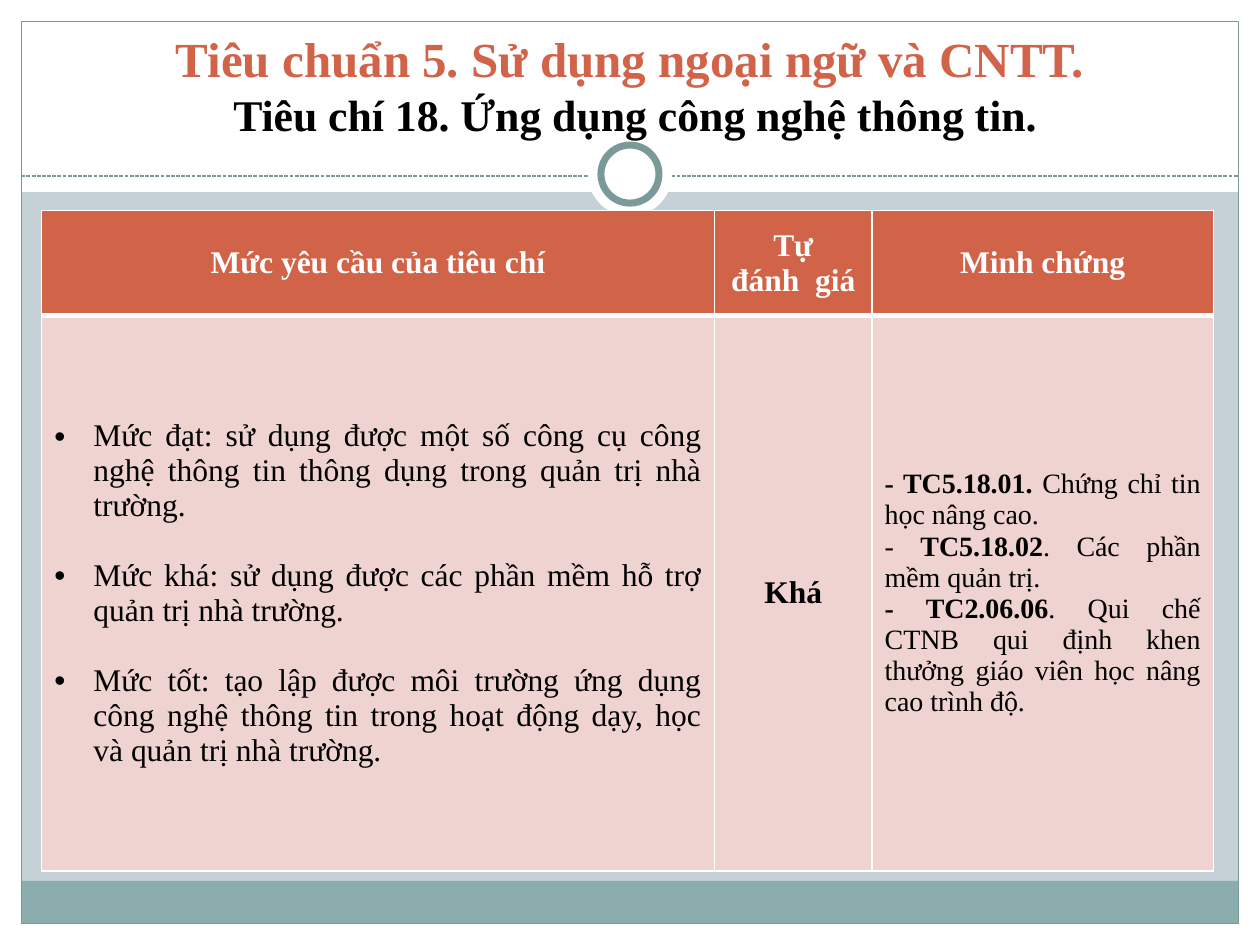
"""Build a slide that rates a school's use of information technology."""
from lxml import etree
from pptx import Presentation
from pptx.dml.color import RGBColor
from pptx.enum.dml import MSO_LINE
from pptx.enum.shapes import MSO_CONNECTOR, MSO_SHAPE
from pptx.enum.text import MSO_ANCHOR, PP_ALIGN
from pptx.oxml.ns import qn
from pptx.util import Cm, Pt

RECTANGLE, ELLIPSE = MSO_SHAPE.RECTANGLE, MSO_SHAPE.OVAL
STRAIGHT = MSO_CONNECTOR.STRAIGHT
DASH = MSO_LINE.SQUARE_DOT
CENTER, JUSTIFY = PP_ALIGN.CENTER, PP_ALIGN.JUSTIFY
MIDDLE, BOTTOM = MSO_ANCHOR.MIDDLE, MSO_ANCHOR.BOTTOM

WIDTH, HEIGHT, MARGIN = 25.4, 19.05, 0.43
WHITE, BLACK, RED, PINK = "FFFFFF", "000000", "D16349", "EED3D0"
GREEN, BAND, BACKGROUND = "7C999A", "8CADAE", "C5D1D7"

HEADINGS = [["Mức yêu cầu của tiêu chí"], ["Tự", "đánh  giá"], ["Minh chứng"]]
LEVELS = [
    "Mức đạt: sử dụng được một số công cụ công nghệ thông tin thông dụng "
    "trong quản trị nhà trường.",
    "Mức khá: sử dụng được các phần mềm hỗ trợ quản trị nhà trường.",
    "Mức tốt: tạo lập được môi trường ứng dụng công nghệ thông tin trong "
    "hoạt động dạy, học và quản trị nhà trường.",
]
EVIDENCE = [
    [("- TC5.18.01. ", True), ("Chứng chỉ tin học nâng cao.", False)],
    [("- ", False), ("TC5.18.02", True), (". Các phần mềm quản trị.", False)],
    [("- TC2.06.06", True),
     (". Qui chế CTNB qui định khen thưởng giáo viên học nâng cao trình độ.", False)],
]


def rgb(value):
    """Turn a hex string into a colour."""
    return RGBColor.from_string(value)


class SlidePainter:
    """Hold the style and the current slide."""

    font = "Times New Roman"

    def __init__(self, slide):
        """Keep the slide and colour its background."""
        self.shapes = slide.shapes
        slide.background.fill.solid()
        slide.background.fill.fore_color.rgb = rgb(BACKGROUND)

    def shape(self, kind, left, top, width, height, fill=None, line=None, weight=0.75):
        """Add a preset shape."""
        shape = self.shapes.add_shape(kind, Cm(left), Cm(top), Cm(width), Cm(height))
        shape.shadow.inherit = False
        if fill:
            shape.fill.solid()
            shape.fill.fore_color.rgb = rgb(fill)
        else:
            shape.fill.background()
        if line:
            shape.line.color.rgb = rgb(line)
            shape.line.width = Pt(weight)
        else:
            shape.line.fill.background()

    def circle(self, middle, diameter, **style):
        """Add a circle centred across the slide."""
        self.shape(ELLIPSE, (WIDTH - diameter) / 2, middle - diameter / 2,
                   diameter, diameter, **style)

    def rule(self, top):
        """Add a dashed line between the side margins."""
        line = self.shapes.add_connector(
            STRAIGHT, Cm(MARGIN), Cm(top), Cm(WIDTH - MARGIN), Cm(top))
        line.line.color.rgb = rgb(GREEN)
        line.line.width = Pt(0.75)
        line.line.dash_style = DASH
        etree.SubElement(line._element.spPr, qn("a:effectLst"))

    def paragraph(self, para, spans, size, color=BLACK, align=CENTER):
        """Fill a paragraph with (text, bold) spans."""
        para.alignment = align
        for text, bold in spans:
            span = para.add_run()
            span.text = text
            span.font.name, span.font.size, span.font.bold = self.font, Pt(size), bold
            span.font.color.rgb = rgb(color)

    def paragraphs(self, frame, lines, size, color=BLACK, align=CENTER):
        """Fill a text frame with one paragraph for each list of spans."""
        frame.text = "\n" * (len(lines) - 1)
        for para, spans in zip(frame.paragraphs, lines):
            self.paragraph(para, spans, size, color, align)

    def title(self, left, top, width, height, lines):
        """Add the title, each line given as text, size and colour."""
        box = self.shapes.add_textbox(Cm(left), Cm(top), Cm(width), Cm(height))
        frame = box.text_frame
        frame.word_wrap = True
        frame.vertical_anchor = BOTTOM
        frame.text = "\n" * (len(lines) - 1)
        for para, (text, size, color) in zip(frame.paragraphs, lines):
            self.paragraph(para, [(text, True)], size, color)

    def table(self, left, top, columns, rows):
        """Add an empty table with the given column widths and row heights."""
        table = self.shapes.add_table(
            len(rows), len(columns), Cm(left), Cm(top),
            Cm(sum(columns)), Cm(sum(rows))).table
        for column, width in zip(table.columns, columns):
            column.width = Cm(width)
        for row, height in zip(table.rows, rows):
            row.height = Cm(height)
        return table

    def cell(self, cell, fill, top=1, bottom=1):
        """Give a cell its fill, anchor and white borders."""
        cell.vertical_anchor = MIDDLE
        properties = cell._tc.get_or_add_tcPr()
        for side, weight in (("L", 1), ("R", 1), ("T", top), ("B", bottom)):
            line = etree.SubElement(properties, qn(f"a:ln{side}"), w=str(Pt(weight)))
            solid = etree.SubElement(line, qn("a:solidFill"))
            etree.SubElement(solid, qn("a:srgbClr"), val=WHITE)
        cell.fill.solid()
        cell.fill.fore_color.rgb = rgb(fill)

    def bullets(self, frame, indent, gap):
        """Put bullets on every paragraph and a gap between them."""
        for index, para in enumerate(frame.paragraphs):
            para.space_before = Pt(gap if index else 0)
            properties = para._p.get_or_add_pPr()
            properties.set("marL", str(Cm(indent)))
            properties.set("indent", str(-Cm(indent)))
            etree.SubElement(properties, qn("a:buFont"), typeface="Arial")
            etree.SubElement(properties, qn("a:buChar"), char="•")


def main():
    """Build and save the slide."""
    deck = Presentation()
    deck.slide_width, deck.slide_height = Cm(WIDTH), Cm(HEIGHT)
    page = SlidePainter(deck.slides.add_slide(deck.slide_layouts[6]))

    inner_width, inner_height = WIDTH - 2 * MARGIN, HEIGHT - 2 * MARGIN
    for area in ((0, HEIGHT - MARGIN, WIDTH, MARGIN), (0, 0, WIDTH, 3.87),
                 (0, 0, MARGIN, HEIGHT), (WIDTH - MARGIN, 0, MARGIN, HEIGHT)):
        page.shape(RECTANGLE, *area, fill=WHITE)
    page.shape(RECTANGLE, MARGIN, 17.76, inner_width, 0.86, fill=BAND)
    page.shape(RECTANGLE, MARGIN, MARGIN, inner_width, inner_height, line=GREEN)
    page.rule(3.55)
    page.circle(3.51, 1.7, fill=WHITE)
    page.circle(3.51, 1.17, fill=WHITE, line=GREEN, weight=4)

    page.title(0.85, 0.2, 23.7, 2.75, [
        ("Tiêu chuẩn 5. Sử dụng ngoại ngữ và CNTT.", 28, RED),
        (" Tiêu chí 18. Ứng dụng công nghệ thông tin.", 25, BLACK)])

    table = page.table(0.84, 4.24, [13.56, 3.18, 6.88], [2.12, 11.2])
    for column, heading in enumerate(HEADINGS):
        header = table.cell(0, column)
        page.cell(header, RED, bottom=3)
        page.paragraphs(header.text_frame, [[(text, True)] for text in heading], 18, WHITE)
        page.cell(table.cell(1, column), PINK, top=3)
    levels, rating, evidence = (cell.text_frame for cell in table.rows[1].cells)
    page.paragraphs(levels, [[(text, False)] for text in LEVELS], 18, align=JUSTIFY)
    page.bullets(levels, 0.79, 20)
    page.paragraphs(rating, [[("Khá", True)]], 18)
    page.paragraphs(evidence, EVIDENCE, 16, align=JUSTIFY)

    deck.save("out.pptx")


if __name__ == "__main__":
    main()
